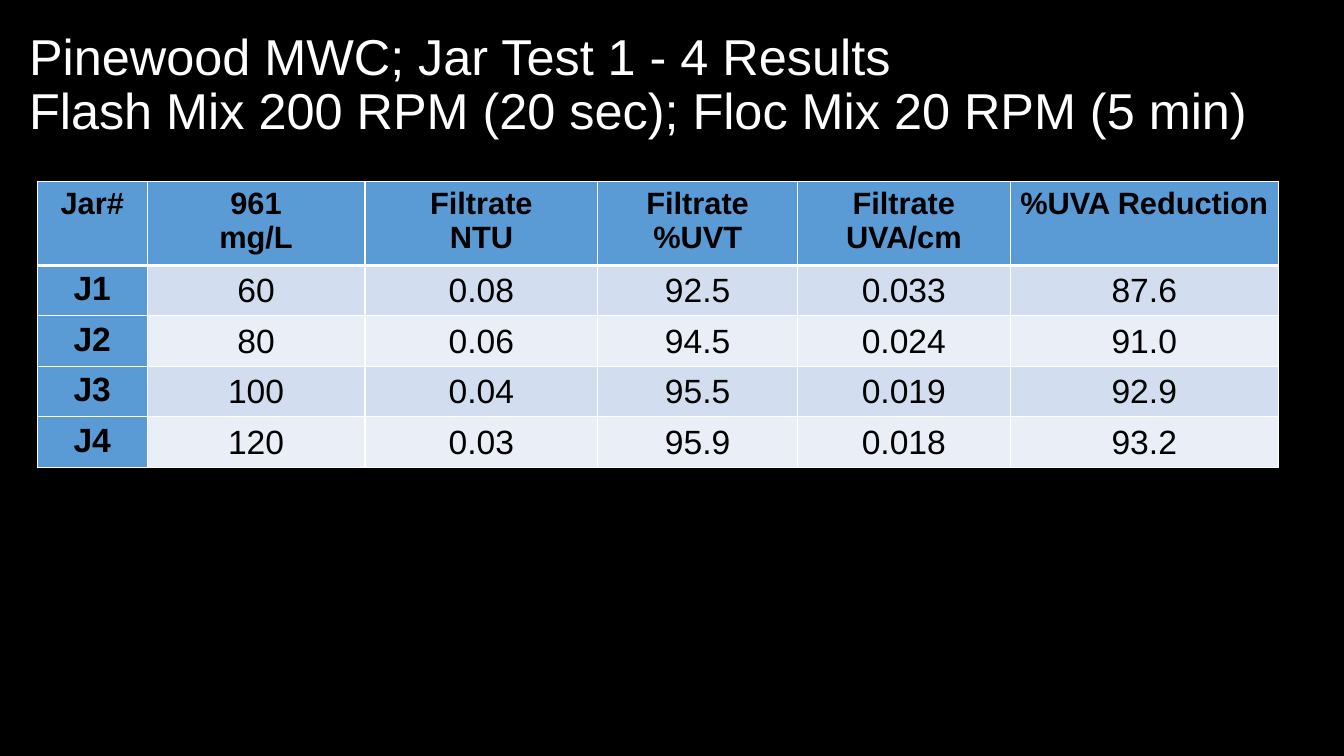
from dataclasses import dataclass

from lxml.etree import SubElement
from pptx import Presentation
from pptx.dml.color import RGBColor
from pptx.enum.text import MSO_ANCHOR, PP_ALIGN
from pptx.oxml.ns import qn
from pptx.util import Inches, Pt


@dataclass(frozen=True)
class Theme:
    font: str = "Arial"
    background: str = "000000"
    title_text: str = "FFFFFF"
    table_text: str = "000000"
    border: str = "FFFFFF"
    accent: str = "5B9BD5"
    bands: tuple = ("D2DEEF", "EAEFF7")
    title_size: int = 36
    header_size: int = 22
    body_size: int = 24
    thin: int = 1
    thick: int = 3


THEME = Theme()
SLIDE_WIDTH, SLIDE_HEIGHT = 13.33, 7.5
TITLE_BOX = (0.19, 0.13, 12.9, 1.45)
TABLE_BOX = (0.37, 1.8, 12.31, 2.67)
COLUMN_WEIGHTS = (1.09, 2.16, 2.31, 1.98, 2.11, 2.66)
ROW_WEIGHTS = (0.79, 0.47, 0.47, 0.47, 0.47)

TITLE_LINES = (
    "Pinewood MWC; Jar Test 1 - 4 Results",
    "Flash Mix 200 RPM (20 sec); Floc Mix 20 RPM (5 min)",
)
HEADERS = (
    ("Jar#",),
    ("961", "mg/L"),
    ("Filtrate", "NTU"),
    ("Filtrate", "%UVT"),
    ("Filtrate", "UVA/cm"),
    ("%UVA Reduction",),
)
RESULTS = (
    ("J1", "60", "0.08", "92.5", "0.033", "87.6"),
    ("J2", "80", "0.06", "94.5", "0.024", "91.0"),
    ("J3", "100", "0.04", "95.5", "0.019", "92.9"),
    ("J4", "120", "0.03", "95.9", "0.018", "93.2"),
)


def add_run(paragraph, text, size, color, bold=False):
    run = paragraph.add_run()
    run.text = text
    run.font.name = THEME.font
    run.font.size = Pt(size)
    run.font.bold = bold
    run.font.color.rgb = RGBColor.from_string(color)


def add_title(slide, box):
    shape = slide.shapes.add_textbox(*map(Inches, box))
    frame = shape.text_frame
    frame.word_wrap = True
    frame.vertical_anchor = MSO_ANCHOR.MIDDLE
    paragraph = frame.paragraphs[0]
    paragraph.line_spacing = 0.9
    for index, line in enumerate(TITLE_LINES):
        if index:
            paragraph.add_line_break()
        add_run(paragraph, line, THEME.title_size, THEME.title_text)


def set_borders(cell, top, bottom):
    properties = cell._tc.get_or_add_tcPr()
    widths = {"a:lnL": THEME.thin, "a:lnR": THEME.thin, "a:lnT": top, "a:lnB": bottom}
    for tag, width in widths.items():
        line = SubElement(properties, qn(tag), w=str(Pt(width)))
        fill = SubElement(line, qn("a:solidFill"))
        SubElement(fill, qn("a:srgbClr"), val=THEME.border)


def fill_cell(cell, lines, row, column):
    is_label = row == 0 or column == 0
    set_borders(
        cell,
        top=THEME.thick if row == 1 else THEME.thin,
        bottom=THEME.thick if row == 0 else THEME.thin,
    )
    cell.fill.solid()
    color = THEME.accent if is_label else THEME.bands[(row - 1) % 2]
    cell.fill.fore_color.rgb = RGBColor.from_string(color)
    if not is_label:
        cell.vertical_anchor = MSO_ANCHOR.MIDDLE
        cell.margin_left = cell.margin_right = cell.margin_top = Inches(0.01)
        cell.margin_bottom = 0
    size = THEME.body_size if row else THEME.header_size
    frame = cell.text_frame
    for index, line in enumerate(lines):
        paragraph = frame.add_paragraph() if index else frame.paragraphs[0]
        paragraph.alignment = PP_ALIGN.CENTER
        add_run(paragraph, line, size, THEME.table_text, is_label)


def add_results_table(slide, box):
    rows = [HEADERS] + [[(value,) for value in result] for result in RESULTS]
    frame = slide.shapes.add_table(len(rows), len(HEADERS), *map(Inches, box))
    table = frame.table
    table.first_col = True
    for column, weight in zip(table.columns, COLUMN_WEIGHTS):
        column.width = Inches(box[2] * weight / sum(COLUMN_WEIGHTS))
    for row, weight in zip(table.rows, ROW_WEIGHTS):
        row.height = Inches(box[3] * weight / sum(ROW_WEIGHTS))
    for row, cells in enumerate(rows):
        for column, lines in enumerate(cells):
            fill_cell(table.cell(row, column), lines, row, column)


def main():
    presentation = Presentation()
    presentation.slide_width = Inches(SLIDE_WIDTH)
    presentation.slide_height = Inches(SLIDE_HEIGHT)
    slide = presentation.slides.add_slide(presentation.slide_layouts[6])
    background = slide.background.fill
    background.solid()
    background.fore_color.rgb = RGBColor.from_string(THEME.background)
    add_title(slide, TITLE_BOX)
    add_results_table(slide, TABLE_BOX)
    presentation.save("out.pptx")


if __name__ == "__main__":
    main()
